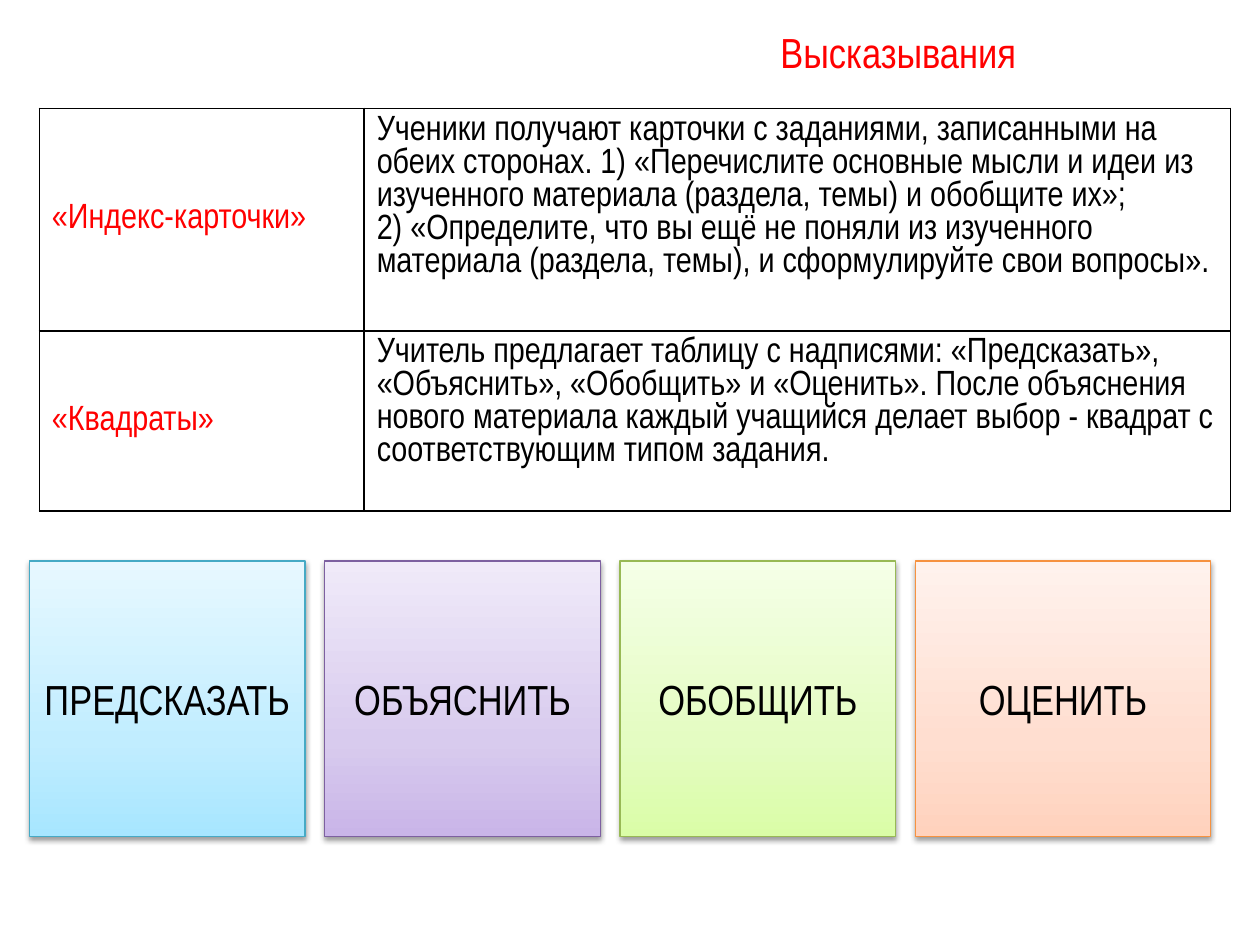
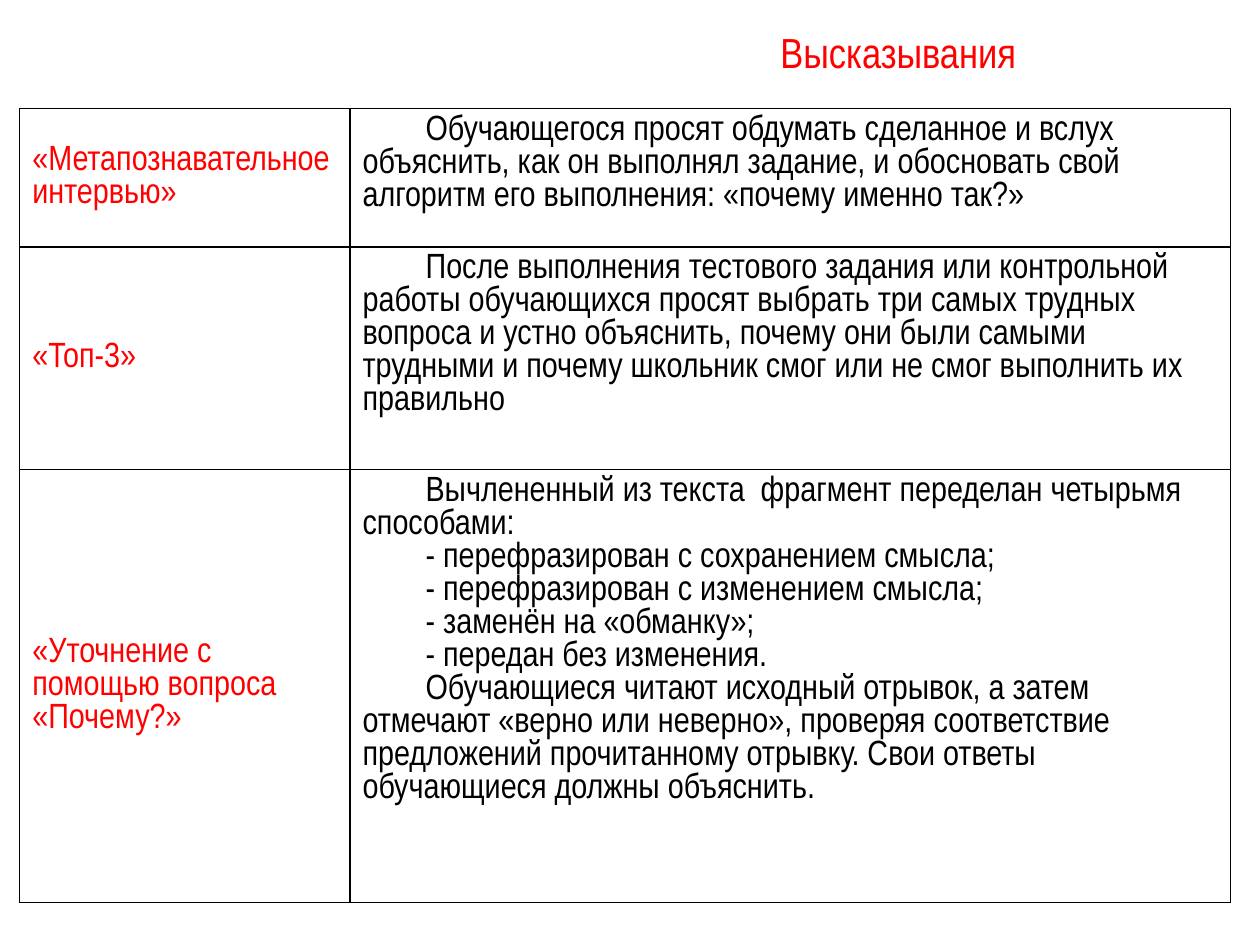
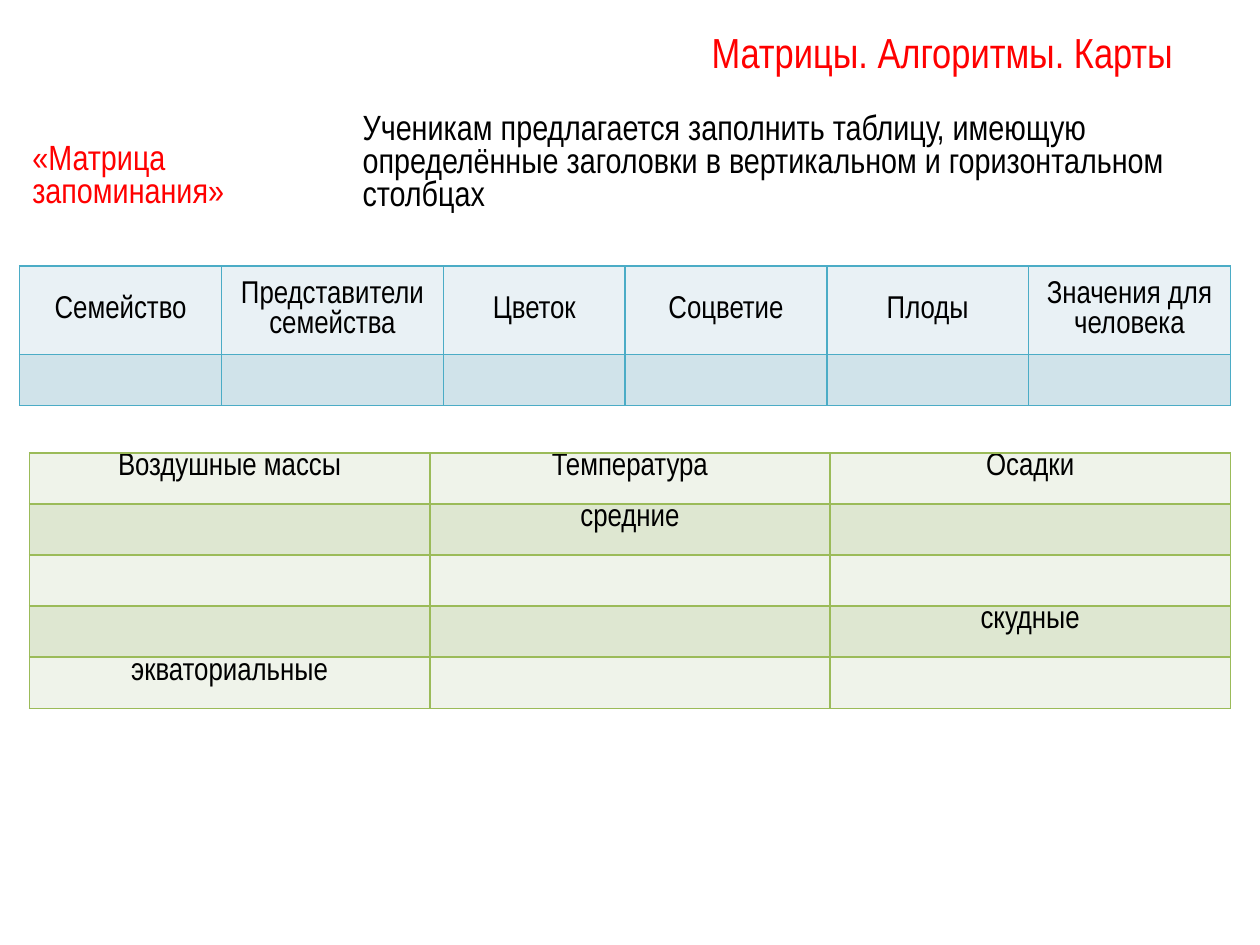
from copy import deepcopy
from dataclasses import dataclass

from lxml import etree
from pptx import Presentation
from pptx.dml.color import RGBColor
from pptx.enum.shapes import MSO_SHAPE
from pptx.enum.text import MSO_ANCHOR, MSO_AUTO_SIZE, PP_ALIGN
from pptx.oxml.ns import qn
from pptx.util import Pt

RECT = MSO_SHAPE.RECTANGLE
TOP, MIDDLE = MSO_ANCHOR.TOP, MSO_ANCHOR.MIDDLE
LEFT, CENTER, JUSTIFY = PP_ALIGN.LEFT, PP_ALIGN.CENTER, PP_ALIGN.JUSTIFY
NO_FIT = MSO_AUTO_SIZE.NONE
TITLE_ONLY = 5


@dataclass(frozen=True)
class Theme:
    font: str = "Arial Narrow"
    accent: str = "FF0000"
    ink: str = "000000"
    teal: str = "4BACC6"
    green: str = "9BBB59"
    teal_bands: tuple = ("E9F1F5", "D0E3EA")
    green_bands: tuple = ("EFF3EA", "DEE7D1")
    title_size: float = 24
    body_size: float = 20
    grid_size: float = 18


THEME = Theme()
TABLE_TOP = 61.9
WIDE_LEFT = 11.25
WIDE_COLS = (188.75, 503.1)

INDEX_CARDS = [
    ("«Индекс-карточки»", [
        "Ученики получают карточки с заданиями, записанными на обеих сторонах. "
        "1) «Перечислите основные мысли и идеи из изученного материала "
        "(раздела, темы) и обобщите их»;",
        "2) «Определите, что вы ещё не поняли из изученного материала "
        "(раздела, темы), и сформулируйте свои вопросы».",
    ]),
    ("«Квадраты»", [
        "Учитель предлагает таблицу с надписями: «Предсказать», «Объяснить», "
        "«Обобщить» и «Оценить». После объяснения нового материала каждый "
        "учащийся делает выбор - квадрат с соответствующим типом задания.",
    ]),
]

SQUARES = [
    ("ПРЕДСКАЗАТЬ", "46AAC5", ("A7E6FF", "C1EDFF", "E7F8FF"), 157.5),
    ("ОБЪЯСНИТЬ", "7D60A0", ("C9B5E8", "D8CBEE", "F0EAF9"), 157.5),
    ("ОБОБЩИТЬ", "98B955", ("DAFDA7", "E4FCC2", "F5FFE7"), 157.5),
    ("ОЦЕНИТЬ", "F69240", ("FFD2BD", "FFDED0", "FFF2ED"), 168.75),
]

INTERVIEWS = [
    ("«Метапознавательное интервью»", [
        "Обучающегося просят обдумать сделанное и вслух объяснить, как он "
        "выполнял задание, и обосновать свой алгоритм его выполнения: "
        "«почему именно так?»",
    ]),
    ("«Топ-3»", [
        "После выполнения тестового задания или контрольной работы обучающихся "
        "просят выбрать три самых трудных вопроса и устно объяснить, почему они "
        "были самыми трудными и почему школьник смог или не смог выполнить их "
        "правильно",
    ]),
    ("«Уточнение с помощью вопроса «Почему?»", [
        "Вычлененный из текста  фрагмент переделан четырьмя способами:",
        "- перефразирован с сохранением смысла;",
        "- перефразирован с изменением смысла;",
        "- заменён на «обманку»;",
        "- передан без изменения.",
        "Обучающиеся читают исходный отрывок, а затем отмечают «верно или "
        "неверно», проверяя соответствие предложений прочитанному отрывку. "
        "Свои ответы обучающиеся должны объяснить.",
    ]),
]

MEMORY_MATRIX = [
    ("«Матрица запоминания»", [
        "Ученикам предлагается заполнить таблицу, имеющую определённые "
        "заголовки в вертикальном и горизонтальном столбцах",
    ]),
]

PLANTS = [
    ["Семейство", "Представители семейства", "Цветок", "Соцветие", "Плоды",
     "Значения для человека"],
    [""] * 6,
]

CLIMATE = [
    ["Воздушные массы", "Температура", "Осадки"],
    ["", "средние", ""],
    ["", "", ""],
    ["", "", "скудные"],
    ["экваториальные", "", ""],
]


def rgb(color):
    return RGBColor.from_string(color)


def set_attrs(obj, values):
    for name, value in values.items():
        setattr(obj, name, value)


def write(tf, texts, size, color, align=LEFT, indent=0):
    for i, text in enumerate(texts):
        p = tf.paragraphs[0] if i == 0 else tf.add_paragraph()
        p.alignment = align
        if indent:
            p._p.get_or_add_pPr().set("indent", str(Pt(indent)))
        r = p.add_run()
        r.text = text
        set_attrs(r.font, {"name": THEME.font, "size": Pt(size), "bold": False})
        r.font.color.rgb = rgb(color)


def add_slide(prs, title, left, width):
    s = prs.slides.add_slide(prs.slide_layouts[TITLE_ONLY])
    sp = s.shapes.title
    set_attrs(sp, {"left": Pt(left), "top": Pt(11.25),
                   "width": Pt(width), "height": Pt(36)})
    set_attrs(sp.text_frame, {"word_wrap": True, "auto_size": NO_FIT,
                              "vertical_anchor": TOP})
    write(sp.text_frame, [title], THEME.title_size, THEME.accent, JUSTIFY)
    return s


def add_borders(cell, color):
    tc_pr = cell._tc.get_or_add_tcPr()
    for i, side in enumerate(("lnL", "lnR", "lnT", "lnB")):
        ln = etree.Element(qn(f"a:{side}"), w=str(Pt(1)))
        fill = etree.SubElement(ln, qn("a:solidFill"))
        etree.SubElement(fill, qn("a:srgbClr"), val=color)
        tc_pr.insert(i, ln)


def add_grid(s, left, top, cols, rows, border=None, bands=None):
    frame = s.shapes.add_table(len(rows), len(cols), Pt(left), Pt(top),
                               Pt(sum(cols)), Pt(sum(rows)))
    table = frame.table
    set_attrs(table, {"first_row": False, "horz_banding": False})
    for col, width in zip(table.columns, cols):
        col.width = Pt(width)
    for i, (row, height) in enumerate(zip(table.rows, rows)):
        row.height = Pt(height)
        for cell in row.cells:
            if bands:
                cell.fill.solid()
                cell.fill.fore_color.rgb = rgb(bands[i % len(bands)])
            else:
                cell.fill.background()
            if border:
                add_borders(cell, border)
    return table


def add_methods(s, methods, left, cols, rows, border=None, indent=0):
    table = add_grid(s, left, TABLE_TOP, cols, rows, border)
    for row, (name, texts) in zip(table.rows, methods):
        name_cell, text_cell = row.cells
        name_cell.vertical_anchor = MIDDLE
        write(name_cell.text_frame, [name], THEME.body_size, THEME.accent)
        write(text_cell.text_frame, texts, THEME.body_size, THEME.ink,
              indent=indent)


def add_matrix(s, values, left, top, cols, rows, border, bands, anchor):
    table = add_grid(s, left, top, cols, rows, border, bands)
    for row, texts in zip(table.rows, values):
        for cell, text in zip(row.cells, texts):
            if text:
                set_attrs(cell, {"margin_left": Pt(5), "margin_right": Pt(5),
                                 "margin_top": 0, "margin_bottom": 0,
                                 "vertical_anchor": anchor})
                write(cell.text_frame, [text], THEME.grid_size, THEME.ink, CENTER)


def add_gradient(sp, colors):
    sp.fill.gradient()
    sp.fill.gradient_angle = 90
    stops = sp._element.spPr.find(".//" + qn("a:gsLst"))
    stops.insert(1, deepcopy(stops[0]))
    for stop, position, color in zip(sp.fill.gradient_stops, (0, 0.35, 1), colors):
        stop.position = position
        stop.color.rgb = rgb(color)


def add_shadow(sp):
    sp.shadow.inherit = False
    effects = sp._element.spPr.find(qn("a:effectLst"))
    shadow = etree.SubElement(effects, qn("a:outerShdw"), blurRad=str(Pt(3.1)),
                              dist=str(Pt(1.6)), dir="5400000", rotWithShape="0")
    color = etree.SubElement(shadow, qn("a:srgbClr"), val=THEME.ink)
    etree.SubElement(color, qn("a:alpha"), val="38000")


def add_square(s, text, line, colors, left, top, width, height):
    sp = s.shapes.add_shape(RECT, Pt(left), Pt(top), Pt(width), Pt(height))
    add_gradient(sp, colors)
    sp.line.color.rgb = rgb(line)
    sp.line.width = Pt(0.75)
    add_shadow(sp)
    sp.text_frame.vertical_anchor = MIDDLE
    write(sp.text_frame, [text], THEME.title_size, THEME.ink, CENTER)


def main():
    prs = Presentation()
    set_attrs(prs, {"slide_width": Pt(720), "slide_height": Pt(540)})

    s = add_slide(prs, "Высказывания", 438.75, 150.5)
    add_methods(s, INDEX_CARDS, 22.5, (185.6, 495.1), (127.2, 103), THEME.ink)
    for i, (text, line, colors, width) in enumerate(SQUARES):
        add_square(s, text, line, colors, 16.88 + i * 168.75, 320.6, width, 157.5)

    s = add_slide(prs, "Высказывания", 438.75, 150.5)
    add_methods(s, INTERVIEWS, WIDE_LEFT, WIDE_COLS, (79.2, 127.2, 247.5),
                THEME.ink, indent=36)

    s = add_slide(prs, "Матрицы. Алгоритмы. Карты", 399.4, 288)
    add_methods(s, MEMORY_MATRIX, WIDE_LEFT, WIDE_COLS, (79.2,))
    add_matrix(s, PLANTS, WIDE_LEFT, 151.9, (115.3, 126.9, 103.8) + (115.3,) * 3,
               (50.6, 29.2), THEME.teal, THEME.teal_bands, MIDDLE)
    add_matrix(s, CLIMATE, 16.88, 258.75, (228.75,) * 3, (29.2,) * 5,
               THEME.green, THEME.green_bands, TOP)

    prs.save("out.pptx")


if __name__ == "__main__":
    main()
